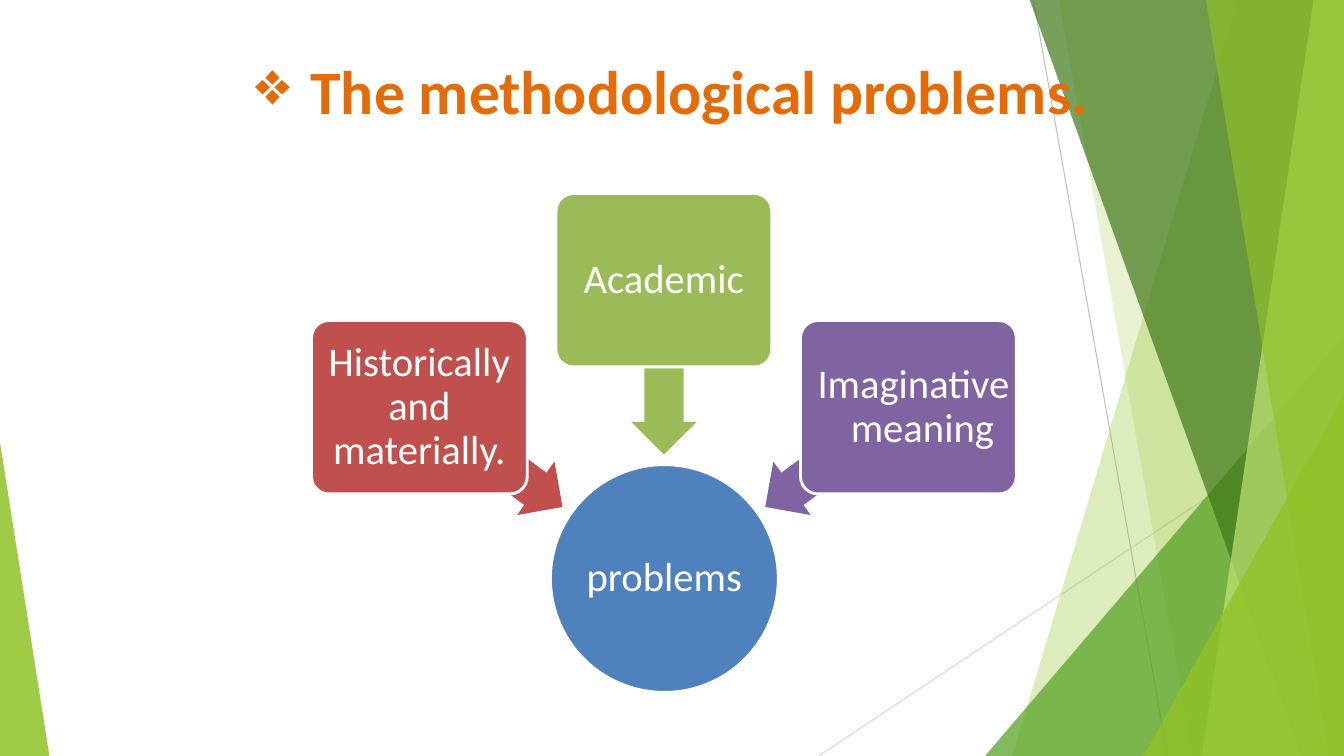
from dataclasses import dataclass
from lxml.etree import SubElement as Sub
from pptx import Presentation
from pptx.dml.color import RGBColor as Rgb
from pptx.enum.shapes import MSO_CONNECTOR as Link, MSO_SHAPE as Kind
from pptx.enum.text import MSO_ANCHOR as Anchor, PP_ALIGN as Align
from pptx.oxml.ns import qn
from pptx.util import Inches, Pt


@dataclass(frozen=True)
class Theme:
    font: str = "Calibri"
    head: int = 44
    body: int = 29
    edge: float = 2.04
    hair: float = 0.75
    white: str = "FFFFFF"
    orange: str = "E36C09"
    blue: str = "4F81BC"
    red: str = "C0504D"
    olive: str = "9BBA58"
    violet: str = "8063A1"
    lime: str = "90C226"
    green: str = "54A021"
    dark: str = "3F7819"
    pale: str = "C0E474"
    gray: str = "BFBFBF"
    light: str = "D9D9D9"


def write(frame, text, *, font, size, color, bold=False, align=Align.CENTER,
          anchor=Anchor.MIDDLE, pads=(0, 0, 0, 0), lead=None, left=0, hang=0, mark=None):
    frame.word_wrap = True
    frame.vertical_anchor = anchor
    (frame.margin_left, frame.margin_top,
     frame.margin_right, frame.margin_bottom) = map(Inches, pads)
    para = frame.paragraphs[0]
    para.alignment = align
    if lead:
        para.line_spacing = lead
    run = para.add_run()
    run.text = text
    run.font.name = font
    run.font.size = Pt(size)
    run.font.bold = bold
    run.font.color.rgb = Rgb.from_string(color)
    props = para._p.get_or_add_pPr()
    props.set("marL", str(Inches(left)))
    props.set("indent", str(Inches(hang)))
    if mark:
        Sub(props, qn("a:buChar"), char=mark)


class Deck:
    def __init__(self, theme):
        self.theme = theme
        self.file = Presentation()
        self.file.slide_width = Inches(13.33)
        self.file.slide_height = Inches(7.5)
        self.slide = self.file.slides.add_slide(self.file.slide_layouts[6])
        self.shapes = self.slide.shapes

    def paint(self, shape, color, alpha=100, edge=False):
        shape.shadow.inherit = False
        shape.fill.solid()
        shape.fill.fore_color.rgb = Rgb.from_string(color)
        if alpha < 100:
            tint = shape._element.spPr.find(".//" + qn("a:srgbClr"))
            Sub(tint, qn("a:alpha"), val=str(alpha * 1000))
        if edge:
            shape.line.color.rgb = Rgb.from_string(self.theme.white)
            shape.line.width = Pt(self.theme.edge)
        else:
            shape.line.fill.background()
        return shape

    def shape(self, kind, box, color, adjust=(), **look):
        item = self.shapes.add_shape(kind, *map(Inches, box))
        for slot, value in enumerate(adjust):
            item.adjustments[slot] = value
        return self.paint(item, color, **look)

    def poly(self, points, color, **look):
        spots = [(Inches(x), Inches(y)) for x, y in points]
        pen = self.shapes.build_freeform(*spots[0])
        pen.add_line_segments(spots[1:], close=True)
        return self.paint(pen.convert_to_shape(), color, **look)

    def line(self, ends, color):
        item = self.shapes.add_connector(Link.STRAIGHT, *map(Inches, ends))
        item.line.color.rgb = Rgb.from_string(color)
        item.line.width = Pt(self.theme.hair)
        Sub(item._element.spPr, qn("a:effectLst"))

    def card(self, kind, box, color, text, adjust=(), **form):
        item = self.shape(kind, box, color, adjust, edge=True)
        write(item.text_frame, text, font=self.theme.font, size=self.theme.body,
              color=self.theme.white, lead=0.9, **form)

    def title(self, box, text):
        item = self.shapes.add_textbox(*map(Inches, box))
        write(item.text_frame, text, font=self.theme.font, size=self.theme.head,
              color=self.theme.orange, bold=True, align=Align.LEFT, anchor=Anchor.TOP,
              pads=(0, 0.02, 0, 0), left=0.56, hang=-0.55, mark="❖")


def facets(deck):
    t = deck.theme
    top, base, right = -0.01, 7.5, 13.33

    def band(start, foot, color, alpha):
        deck.poly([(start, top), (right, top), (right, base), (foot, base)],
                  color, alpha=alpha)

    def wedge(box, apex, color, alpha):
        deck.shape(Kind.ISOSCELES_TRIANGLE, box, color, [apex], alpha=alpha)

    deck.line((10.25, 0, 11.58, base), t.gray)
    deck.line((right, 4.03, 8.12, base), t.light)
    band(12.28, 10.04, t.lime, 30)
    band(10.5, 11.83, t.lime, 20)
    wedge((9.77, 3.33, 3.56, 4.17), 1, t.green, 72)
    band(10.21, 12.91, t.dark, 70)
    band(13.03, 11.92, t.pale, 70)
    band(11.96, 13.18, t.lime, 65)
    wedge((11.34, 3.93, 1.99, 3.57), 1, t.lime, 80)
    wedge((0, 4.39, 0.49, 3.11), 0, t.lime, 85)


def causes(deck):
    t = deck.theme
    mid, wide, tall, gap = 6.585, 2.14, 1.72, 2.425
    arrow = [(5.58, 5.03), (5.5, 4.58), (5.42, 4.69), (5.23, 4.55),
             (5.05, 4.55), (5.05, 4.9), (5.2, 5.01), (5.13, 5.11)]
    deck.card(Kind.OVAL, (5.46, 4.61, 2.26, 2.26), t.blue, "problems")
    deck.poly(arrow, t.red)
    deck.shape(Kind.DOWN_ARROW, (6.26, 3.63, 0.65, 0.88), t.olive, [0.6, 0.5])
    deck.poly([(2 * mid - x, y) for x, y in arrow], t.violet)
    cards = [
        (3.18, t.red, "Historically and materially.", {}),
        (1.92, t.olive, "Academic", {}),
        (3.18, t.violet, "Imaginative meaning",
         dict(align=Align.LEFT, pads=(0.1, 0, 0, 0), left=0.35, hang=-0.33)),
    ]
    for step, (y, color, text, form) in enumerate(cards, -1):
        x = mid + step * gap - wide / 2
        deck.card(Kind.ROUNDED_RECTANGLE, (x, y, wide, tall), color, text, [0.1], **form)


def main():
    deck = Deck(Theme())
    facets(deck)
    deck.title((2.52, 0.51, 8.4, 0.76), "The methodological problems.")
    causes(deck)
    deck.file.save("out.pptx")


if __name__ == "__main__":
    main()
